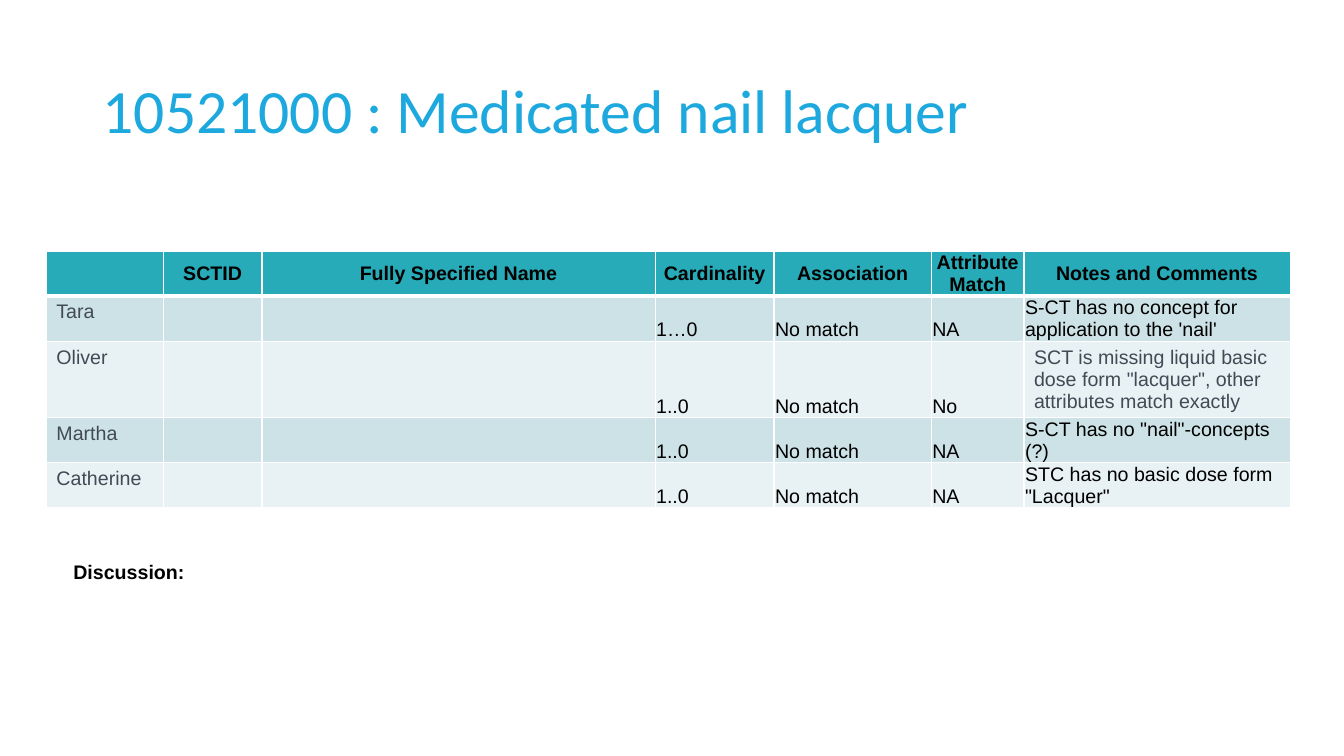
"""Build the slide that reviews matches for medicated nail lacquer."""
import pptx
import pptx.util
import pptx.dml.color
import pptx.enum.text
import lxml.etree

Pt = pptx.util.Pt
Align = pptx.enum.text.PP_ALIGN
Anchor = pptx.enum.text.MSO_ANCHOR
Fit = pptx.enum.text.MSO_AUTO_SIZE

deck = pptx.Presentation()
deck.slide_width = pptx.util.Inches(13.333)
deck.slide_height = pptx.util.Inches(7.5)
wide, high = deck.slide_width / 100, deck.slide_height / 100
slide = deck.slides.add_slide(deck.slide_layouts[5])


def color(code):
    return pptx.dml.color.RGBColor.from_string(code)


def write(para, text, tint, **form):
    run = para.add_run()
    run.text = text
    run.font.color.rgb = color(tint)
    for key, value in {"name": "Arial", "size": Pt(14), "bold": False, **form}.items():
        setattr(run.font, key, value)


title = slide.shapes.title
place = {"left": 6.9 * wide, "top": 5.33 * high, "width": 86.25 * wide, "height": 19.33 * high}
for key, value in place.items():
    setattr(title, key, int(value))
frame = title.text_frame
for key, value in {"auto_size": Fit.NONE, "word_wrap": True, "vertical_anchor": Anchor.MIDDLE}.items():
    setattr(frame, key, value)
head = frame.paragraphs[0]
head.alignment = Align.LEFT
head.line_spacing = 0.9
write(head, "10521000 : Medicated nail lacquer", "1DA8DE", name="Calibri", size=Pt(44))

rows = [
    ["", "SCTID", "Fully Specified Name", "Cardinality", "Association",
     "Attribute Match", "Notes and Comments"],
    ["Tara", "", "", "1…0", "No match", "NA",
     "S-CT has no concept for application to the 'nail'"],
    ["Oliver", "", "", "1..0", "No match", "No",
     'SCT is missing liquid basic dose form "lacquer", other attributes match exactly'],
    ["Martha", "", "", "1..0", "No match", "NA", 'S-CT has no "nail"-concepts (?)'],
    ["Catherine", "", "", "1..0", "No match", "NA", 'STC has no basic dose form "Lacquer"'],
]
cols = [8.7, 7.35, 29.25, 8.85, 11.7, 6.9, 19.8]
tight = {"margin_left": 0.01, "margin_right": 0.01, "margin_top": 0.01, "margin_bottom": 0}
space = "http://schemas.openxmlformats.org/drawingml/2006/main"

grid = slide.shapes.add_table(
    len(rows), len(cols), int(3.45 * wide), int(33.2 * high),
    int(sum(cols) * wide), int(5.6 * len(rows) * high)).table
for col, share in zip(grid.columns, cols):
    col.width = int(share * wide)

for r, row in enumerate(rows):
    band = "27ABB8" if r == 0 else ("E8F1F3", "CDE2E6")[r % 2]
    for c, text in enumerate(row):
        cell = grid.cell(r, c)
        for side in "LRTB":
            thick = 3 if (r, side) in ((0, "B"), (1, "T")) else 1
            cell._tc.get_or_add_tcPr().append(lxml.etree.fromstring(
                f'<a:ln{side} xmlns:a="{space}" w="{Pt(thick)}"><a:solidFill>'
                f'<a:srgbClr val="FFFFFF"/></a:solidFill></a:ln{side}>'))
        cell.fill.solid()
        cell.fill.fore_color.rgb = color(band)
        if not text:
            continue
        loose = r > 0 and (c == 0 or row[0] == "Oliver" and c == 6)
        if not loose:
            cell.vertical_anchor = Anchor.BOTTOM if r else Anchor.MIDDLE
            for key, value in tight.items():
                setattr(cell, key, pptx.util.Inches(value))
        para = cell.text_frame.paragraphs[0]
        para.alignment = Align.LEFT if r else Align.CENTER
        write(para, text, "424A55" if loose else "000000", bold=r == 0)

talk = slide.shapes.add_textbox(
    int(4.72 * wide), int(73.47 * high), int(89.63 * wide), int(7.6 * high)).text_frame
talk.word_wrap = True
write(talk.paragraphs[0], "Discussion:", "000000", bold=True)

deck.save("out.pptx")
